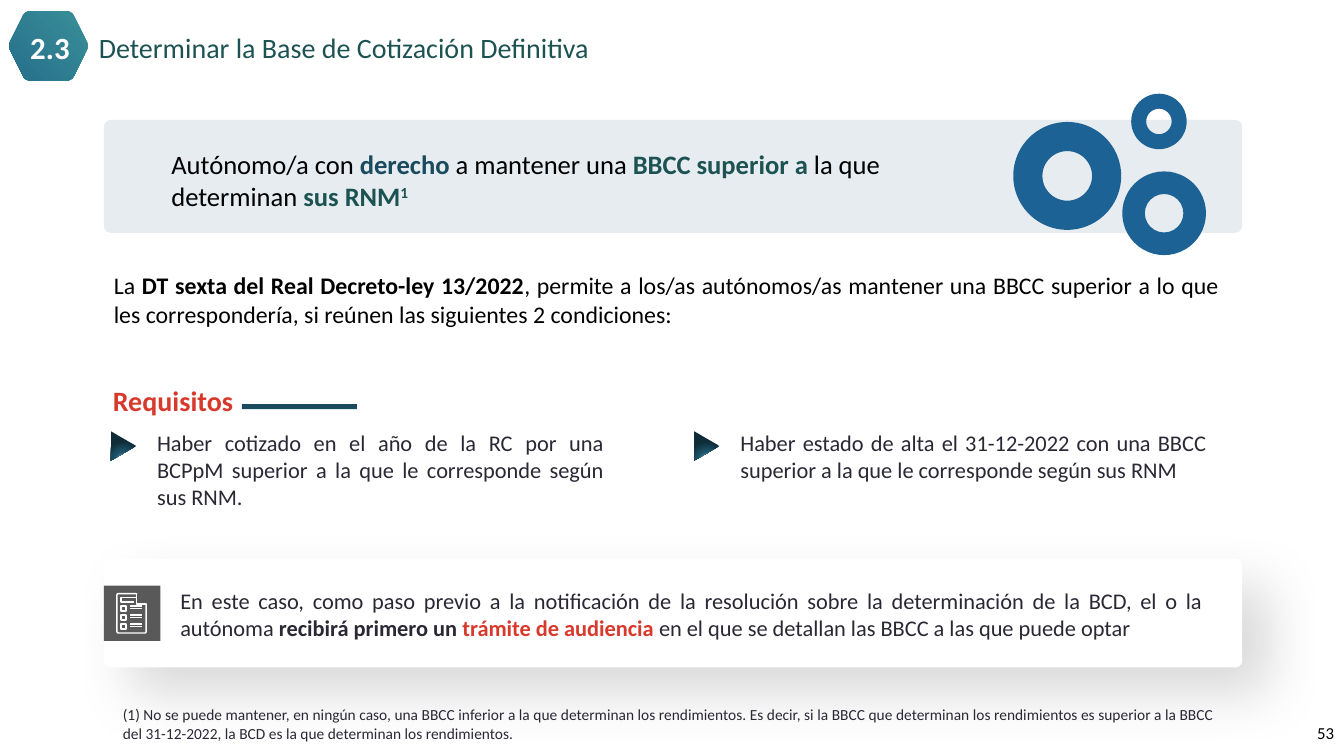
from lxml import etree
from pptx import Presentation
from pptx.dml.color import RGBColor
from pptx.enum.shapes import MSO_SHAPE as SHAPE
from pptx.enum.text import MSO_ANCHOR as ANCHOR, PP_ALIGN as ALIGN
from pptx.oxml.ns import nsdecls, qn
from pptx.util import Inches, Pt

WIDTH, HEIGHT = Inches(13.33), Inches(7.5)
FONT = "Calibri"
BLACK = RGBColor(0x00, 0x00, 0x00)
WHITE = RGBColor(0xFF, 0xFF, 0xFF)
INK = RGBColor(0x29, 0x28, 0x34)
RED = RGBColor(0xD7, 0x3A, 0x2C)
NAVY = RGBColor(0x19, 0x4A, 0x5D)
GREEN = RGBColor(0x1D, 0x52, 0x53)
BANNER_BLUE = RGBColor(0x16, 0x4C, 0x74)
GEAR_BLUE = RGBColor(0x1C, 0x62, 0x94)
BADGE_GREY = RGBColor(0x59, 0x59, 0x59)
ARROW_STOPS = [(0, RGBColor(0x83, 0xC5, 0xDE)), (46, RGBColor(0x1D, 0x56, 0x6C)),
               (100, RGBColor(0x0F, 0x2C, 0x38))]
HEX_STOPS = [(0, RGBColor(0x26, 0x6F, 0x8B)), (100, RGBColor(0x39, 0x8F, 0x98))]


def place(x, y, w, h):
    return (int(WIDTH * x / 100), int(HEIGHT * y / 100),
            int(WIDTH * w / 100), int(HEIGHT * h / 100))


def write(tf, runs, size, align=ALIGN.LEFT, spacing=None):
    tf.word_wrap = True
    p = tf.paragraphs[0]
    p.alignment = align
    if spacing:
        p.line_spacing = spacing
    for text, color, bold in runs:
        r = p.add_run()
        r.text = text
        r.font.name, r.font.size, r.font.bold = FONT, Pt(size), bold
        r.font.color.rgb = color
    return p


def add_text(slide, box, runs, size, align=ALIGN.LEFT, spacing=None,
             insets=(0.1, 0.05), anchor=ANCHOR.TOP):
    tf = slide.shapes.add_textbox(*place(*box)).text_frame
    tf.margin_left = tf.margin_right = Inches(insets[0])
    tf.margin_top = tf.margin_bottom = Inches(insets[1])
    tf.vertical_anchor = anchor
    return write(tf, runs, size, align, spacing)


def add_filled(slide, kind, box, color, adjust=None):
    sp = slide.shapes.add_shape(kind, *place(*box))
    sp.shadow.inherit = False
    sp.fill.solid()
    sp.fill.fore_color.rgb = color
    sp.line.fill.background()
    if adjust is not None:
        sp.adjustments[0] = adjust
    return sp


def set_alpha(sp, percent):
    color = sp._element.spPr.find(qn("a:solidFill"))[0]
    etree.SubElement(color, qn("a:alpha"), val=str(percent * 1000))


def set_soft_shadow(sp):
    effects = sp._element.spPr.find(qn("a:effectLst"))
    effects.append(etree.fromstring(
        f'<a:outerShdw {nsdecls("a")} blurRad="{Pt(40)}" dist="{Pt(26)}" dir="2700000" '
        f'algn="ctr" rotWithShape="0"><a:srgbClr val="{BLACK}">'
        '<a:alpha val="15000"/></a:srgbClr></a:outerShdw>'))


def set_radial(sp, stops, focus):
    sp.fill.background()
    spPr = sp._element.spPr
    gs = "".join(f'<a:gs pos="{pos * 1000}"><a:srgbClr val="{color}"/></a:gs>'
                 for pos, color in stops)
    rect = " ".join(f'{side}="{value * 1000}"' for side, value in zip("ltrb", focus))
    spPr.replace(spPr.find(qn("a:noFill")), etree.fromstring(
        f'<a:gradFill {nsdecls("a")} rotWithShape="1"><a:gsLst>{gs}</a:gsLst>'
        f'<a:path path="circle"><a:fillToRect {rect}/></a:path></a:gradFill>'))


def add_outline(slide, box, points, close=False):
    x, y, w, h = place(*box)
    builder = slide.shapes.build_freeform(*points[0], scale=(w / 1000, h / 1000))
    builder.add_line_segments(points[1:], close=close)
    sp = builder.convert_to_shape(x, y)
    sp.shadow.inherit = False
    sp.fill.background()
    sp.line.fill.background()
    return sp


def add_stroke(slide, box, points, close=False):
    sp = add_outline(slide, box, points, close)
    sp.line.color.rgb = WHITE
    sp.line.width = Pt(1.05)


def add_rule(slide, box, x1, x2, y):
    left, top, w, h = place(*box)
    level = int(top + h * y / 1000)
    line = slide.shapes.add_connector(1, int(left + w * x1 / 1000), level,
                                      int(left + w * x2 / 1000), level)
    line.line.color.rgb = WHITE
    line.line.width = Pt(1.05)
    etree.SubElement(line._element.spPr, qn("a:effectLst"))


def round_corners(vertices, cut=0.13, steps=6):
    points = []
    for i, v in enumerate(vertices):
        before, after = vertices[i - 1], vertices[(i + 1) % len(vertices)]
        for t in (s / steps for s in range(steps + 1)):
            points.append(tuple(
                c + cut * ((1 - t) ** 2 * (a - c) + t ** 2 * (b - c))
                for a, c, b in zip(before, v, after)))
    return points


def add_header(slide):
    title = slide.shapes.title
    title.left, title.top, title.width, title.height = place(6.6, 4, 86.87, 5.2)
    title.text_frame.vertical_anchor = ANCHOR.TOP
    write(title.text_frame, [("Determinar la Base de Cotización Definitiva", GREEN, False)],
          20, spacing=0.85)
    corners = [(205, 0), (795, 0), (1015, 500), (795, 1000), (205, 1000), (-15, 500)]
    hexagon = add_outline(slide, (0.68, 1.47, 5.85, 9.2), round_corners(corners), True)
    set_radial(hexagon, HEX_STOPS, (0, 100, 100, 0))
    add_text(slide, (1.28, 4.67, 4.88, 4), [("2.3", WHITE, True)], 22, ALIGN.CENTER,
             0.8, (0.1, 0), ANCHOR.MIDDLE)


def add_banner(slide):
    set_alpha(add_filled(slide, SHAPE.ROUNDED_RECTANGLE, (7.73, 15.87, 84.7, 14.93),
                         BANNER_BLUE, 0.06), 10)
    p = add_text(slide, (12.75, 19.6, 61.5, 8.53), [
        ("Autónomo/a con ", BLACK, False), ("derecho", NAVY, True),
        (" a mantener una ", BLACK, False), ("BBCC superior a ", GREEN, True),
        ("la que determinan ", BLACK, False), ("sus RNM", GREEN, True),
        ("1", GREEN, True)], 19, insets=(0, 0))
    p.runs[-1].font._element.set("baseline", "30000")
    for x, y, d in [(75.39, 16.13, 8.03), (83.5, 22.67, 6.23), (84.17, 12.4, 4.13)]:
        add_filled(slide, SHAPE.DONUT, (x, y, d, d * WIDTH / HEIGHT), GEAR_BLUE, 0.27)


def add_requirements(slide):
    add_text(slide, (8.4, 50.67, 13.28, 4.53), [("Requisitos", RED, True)], 20, insets=(0, 0))
    add_filled(slide, SHAPE.RECTANGLE, (18, 53.47, 8.55, 0.67), NAVY)
    requirements = [
        ("Haber cotizado en el año de la RC por una BCPpM superior a la que le "
         "corresponde según sus RNM.", 34.73),
        ("Haber estado de alta el 31-12-2022 con una BBCC superior a la que le "
         "corresponde según sus RNM", 36.16)]
    for i, (text, width) in enumerate(requirements):
        x = 8.1 + 43.4 * i
        arrow = add_filled(slide, SHAPE.ISOSCELES_TRIANGLE, (x, 57.33, 2.18, 3.33), NAVY)
        arrow.rotation = 90
        set_radial(arrow, ARROW_STOPS, (50, 130, 50, -30))
        add_text(slide, (x + 2.85, 56.13, width, 12.13), [(text, INK, False)], 16,
                 ALIGN.JUSTIFY)


def add_checklist_icon(slide):
    add_filled(slide, SHAPE.RECTANGLE, (7.73, 77.47, 4.2, 7.33), BADGE_GREY)
    page = (8.7, 78.53, 2.18, 5.2)
    add_stroke(slide, page, round_corners(
        [(1000, 260), (1000, 1000), (0, 1000), (0, 0), (660, 0)], 0.06))
    add_stroke(slide, page, [(660, 0), (660, 260), (1000, 260)])
    add_stroke(slide, page, [(660, 100), (140, 100), (140, 210), (590, 210)])
    for y in range(310, 800, 230):
        add_stroke(slide, page, [(140, y), (310, y), (310, y + 130), (140, y + 130)], True)
        for level in (y, y + 70):
            add_rule(slide, page, 450, 860, level)


def add_notice(slide):
    card = add_filled(slide, SHAPE.ROUNDED_RECTANGLE, (7.73, 73.87, 84.7, 14.4), WHITE, 0.06)
    set_soft_shadow(card)
    add_checklist_icon(slide)
    add_text(slide, (12.68, 77.07, 77.57, 8.53), [
        ("En este caso, como paso previo a la notificación de la resolución sobre la "
         "determinación de la BCD, el o la autónoma ", INK, False),
        ("recibirá primero un ", INK, True), ("trámite de audiencia ", RED, True),
        ("en el que se detallan las BBCC a las que puede optar", INK, False)],
        16, ALIGN.JUSTIFY)


def main():
    prs = Presentation()
    prs.slide_width, prs.slide_height = WIDTH, HEIGHT
    slide = prs.slides.add_slide(prs.slide_layouts[5])
    add_header(slide)
    add_banner(slide)
    add_text(slide, (7.73, 35.2, 83.72, 8.93), [
        ("La ", BLACK, False), ("DT sexta del Real Decreto-ley 13/2022", BLACK, True),
        (", permite a los/as autónomos/as mantener una BBCC superior a lo que les "
         "correspondería, si reúnen las siguientes 2 condiciones:", BLACK, False)],
        17, ALIGN.JUSTIFY)
    add_requirements(slide)
    add_notice(slide)
    add_text(slide, (8.4, 92.67, 82.75, 6.27), [
        ("(1) No se puede mantener, en ningún caso, una BBCC inferior a la que determinan "
         "los rendimientos. Es decir, si la BBCC que determinan los rendimientos es superior "
         "a la BBCC del 31-12-2022, la BCD es la que determinan los rendimientos.",
         INK, False)], 11, ALIGN.JUSTIFY)
    add_text(slide, (77.5, 94.27, 22.5, 5.33), [("53", BLACK, False)], 12, ALIGN.RIGHT,
             anchor=ANCHOR.MIDDLE)
    prs.save("out.pptx")


if __name__ == "__main__":
    main()
